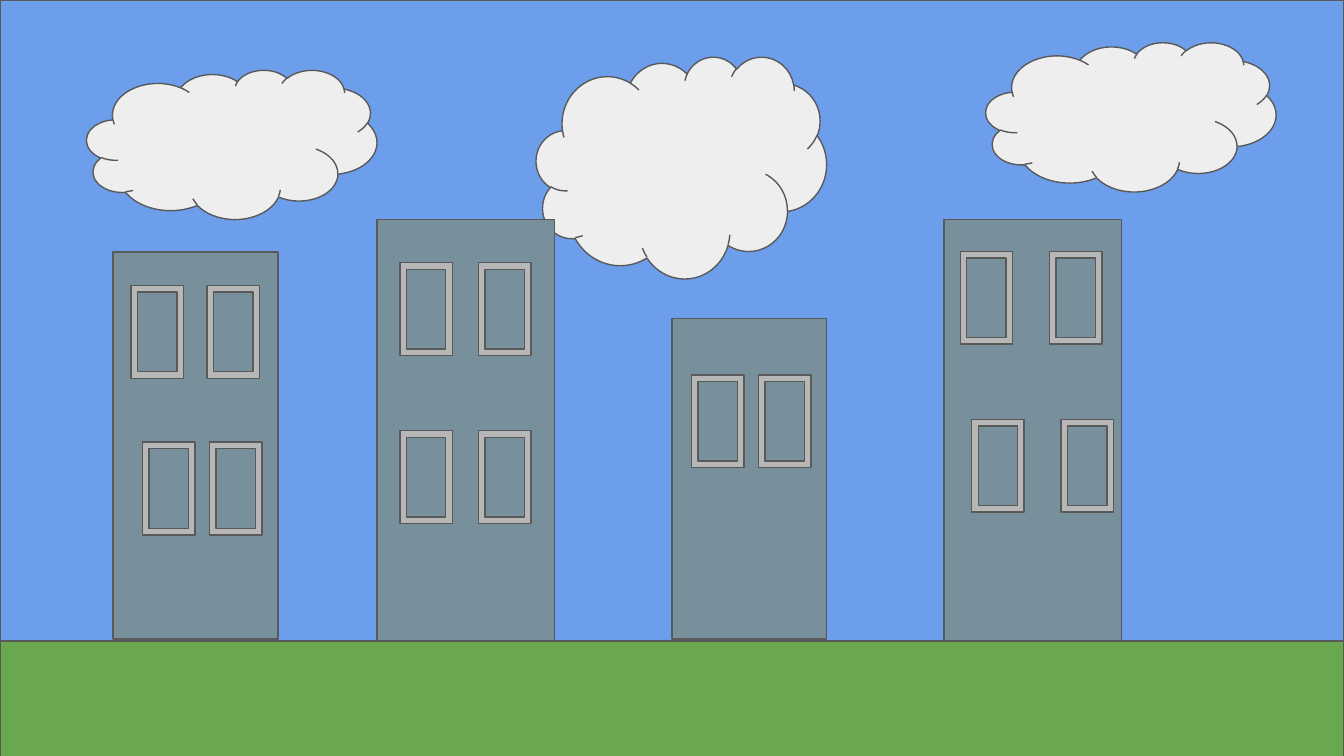
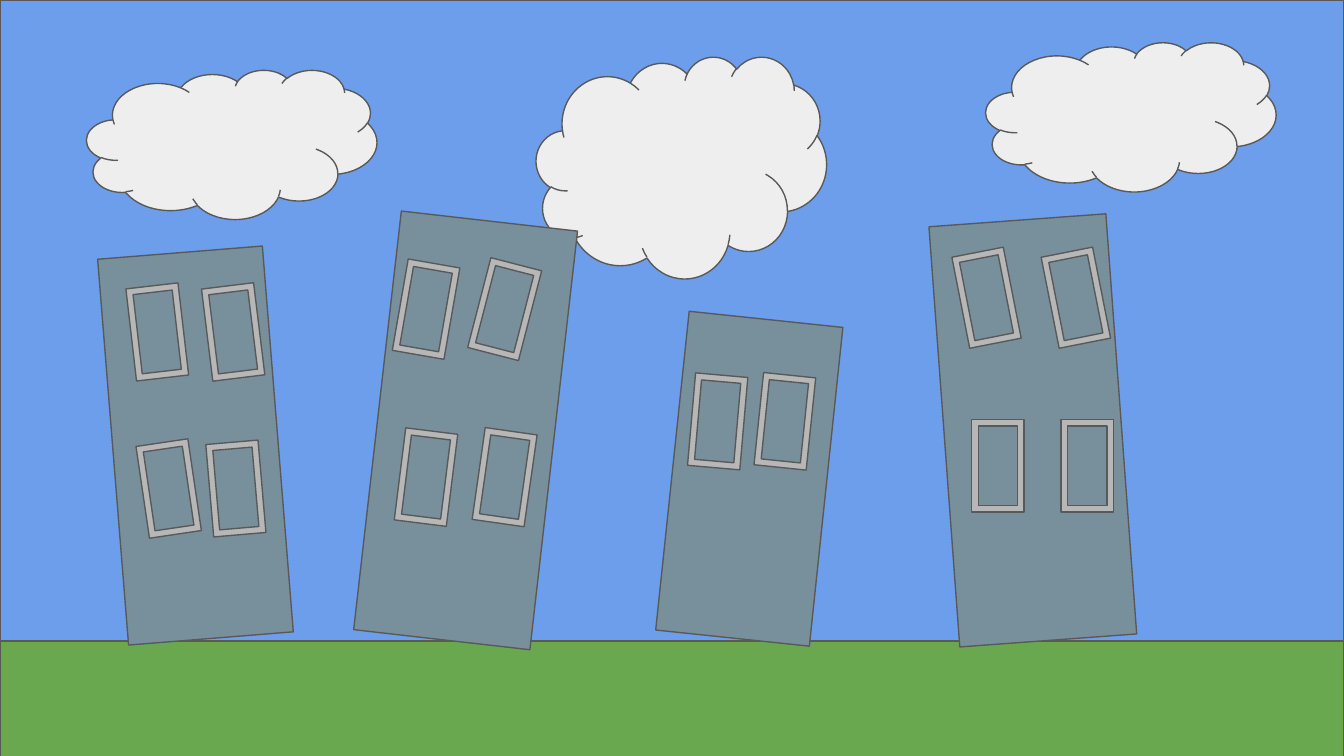
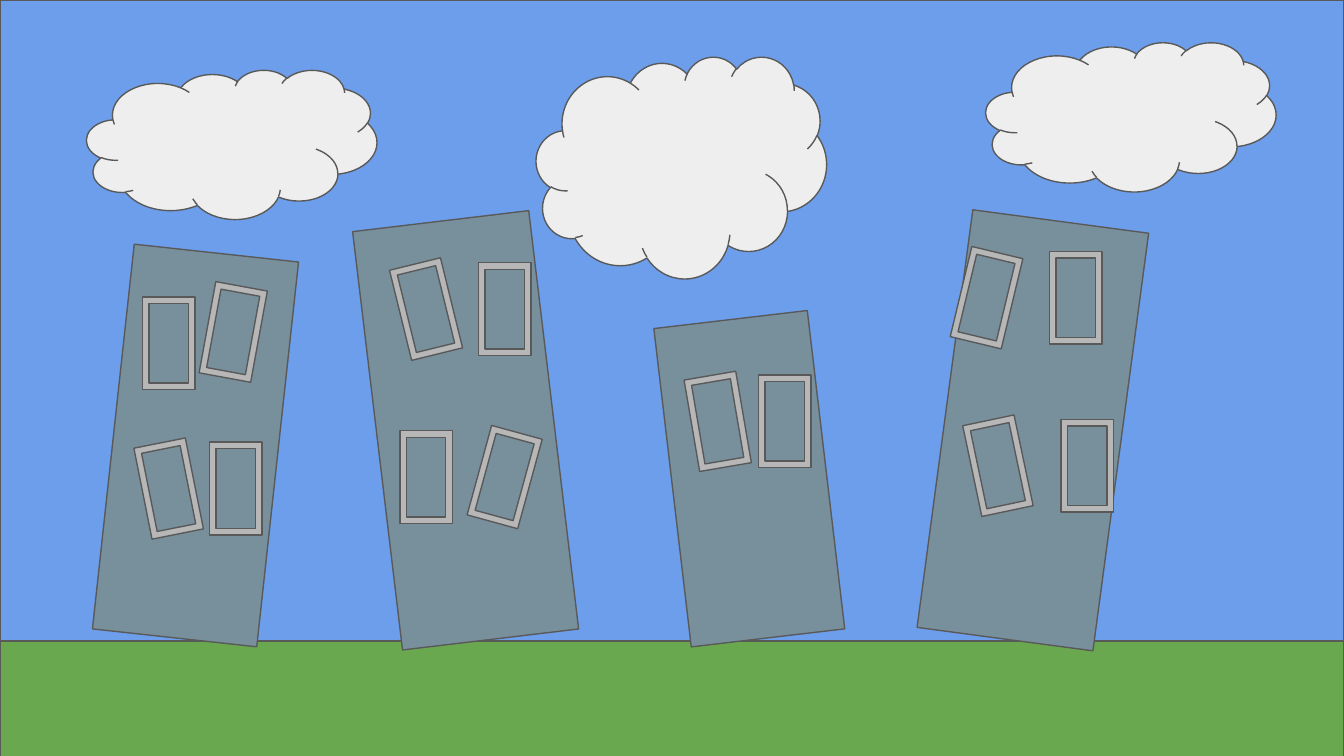
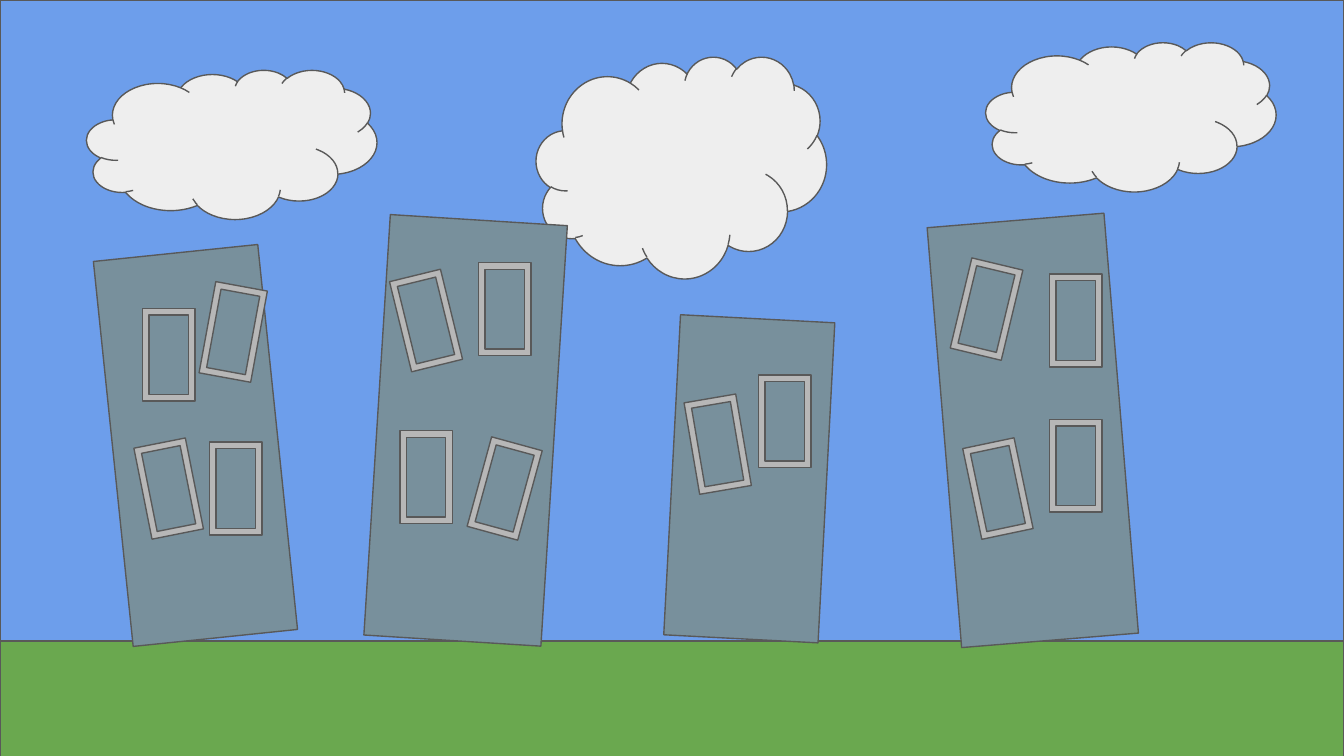
from dataclasses import dataclass, field

from pptx import Presentation
from pptx import util as u
from pptx.dml.color import RGBColor
from pptx.enum import shapes
from pptx.slide import Slide

PX = 4572  # EMU in one px, 200 px to the inch
WIDE, HIGH = 2000, 1125

GRASS = RGBColor(0x6A, 0xA8, 0x4F)
SKY = RGBColor(0x6D, 0x9E, 0xEB)
WHITE = RGBColor(0xEE, 0xEE, 0xEE)
SLATE = RGBColor(0x78, 0x90, 0x9C)
TRIM = RGBColor(0xB7, 0xB7, 0xB7)
EDGE = RGBColor(0x59, 0x59, 0x59)

RECT = shapes.MSO_SHAPE.RECTANGLE
CLOUD = shapes.MSO_SHAPE.CLOUD
FRAME = shapes.MSO_SHAPE.FRAME


@dataclass(frozen=True)
class Box:
    x: int
    y: int
    w: int
    h: int


@dataclass(frozen=True)
class Scene:
    """Lean of each tower, turn of each window, and windows that slip."""
    leans: tuple[float, ...]
    turns: tuple[float, ...]
    slips: dict[int, tuple[int, int]] = field(default_factory=dict)


HORIZON = 954
GROUND = Box(0, HORIZON, WIDE, 182)
AIR = Box(0, 0, WIDE, HORIZON)
CLOUDS = (
    Box(129, 104, 432, 222),
    Box(798, 84, 432, 330),
    Box(1467, 63, 432, 222),
)
TOWERS = (
    Box(168, 375, 246, 576),
    Box(561, 327, 264, 627),
    Box(1000, 474, 230, 477),
    Box(1405, 327, 264, 627),
)
PANE_W, PANE_H = 78, 138
PANES = (
    (308, 425), (195, 425), (212, 658), (312, 658),
    (595, 391), (712, 391), (712, 641), (595, 641),
    (1029, 558), (1129, 558),
    (1429, 374), (1562, 374), (1579, 624), (1446, 624),
)

STILL = (0,) * len(PANES)
SWAY = (-7, -6.6, -8.4, -4.9, 9.9, 14.5, 8.1, 7.1, 5, 5.9, -11.1, -11.2, 0, 0)
LOOSE = (10.4, 0, -11.3, 0, -13.8, 0, 15.3, 0, -9.7, 0, 13.5, 0, 0, -11.9)

SCENES = (
    Scene((0, 0, 0, 0), STILL),
    Scene((-4.6, 6.5, 6, -4.2), SWAY),
    Scene((6.2, -6.8, -6.7, 7.6), LOOSE, {1: (17, 17)}),
    Scene((-5.9, 3.6, 3, -4.7), LOOSE, {
        1: (17, 34), 4: (0, 17), 6: (0, 17), 8: (0, 34),
        10: (0, 17), 11: (0, 34), 12: (-17, 0), 13: (0, 34),
    }),
)


def draw(slide: Slide, kind: shapes.MSO_SHAPE, box: Box, fill: RGBColor,
         turn: float = 0) -> None:
    shape = slide.shapes.add_shape(
        kind, *(n * PX for n in (box.x, box.y, box.w, box.h)))
    shape.shadow.inherit = False
    shape.fill.solid()
    shape.fill.fore_color.rgb = fill
    shape.line.color.rgb = EDGE
    shape.line.width = u.Pt(0.75)
    shape.rotation = turn
    if kind == FRAME:
        shape.adjustments[0] = 0.125


def stage(slide: Slide) -> None:
    """Draw the ground, sky and clouds that every slide shares."""
    draw(slide, RECT, GROUND, GRASS)
    draw(slide, RECT, AIR, SKY)
    for cloud in CLOUDS:
        draw(slide, CLOUD, cloud, WHITE)


def city(slide: Slide, scene: Scene) -> None:
    for tower, lean in zip(TOWERS, scene.leans):
        draw(slide, RECT, tower, SLATE, lean)
    for i, ((x, y), turn) in enumerate(zip(PANES, scene.turns)):
        dx, dy = scene.slips.get(i, (0, 0))
        draw(slide, FRAME, Box(x + dx, y + dy, PANE_W, PANE_H), TRIM, turn)


def main() -> None:
    deck = Presentation()
    deck.slide_width, deck.slide_height = WIDE * PX, HIGH * PX
    blank = deck.slide_layouts[6]
    for scene in SCENES:
        slide = deck.slides.add_slide(blank)
        stage(slide)
        city(slide, scene)
    deck.save("out.pptx")


if __name__ == "__main__":
    main()
